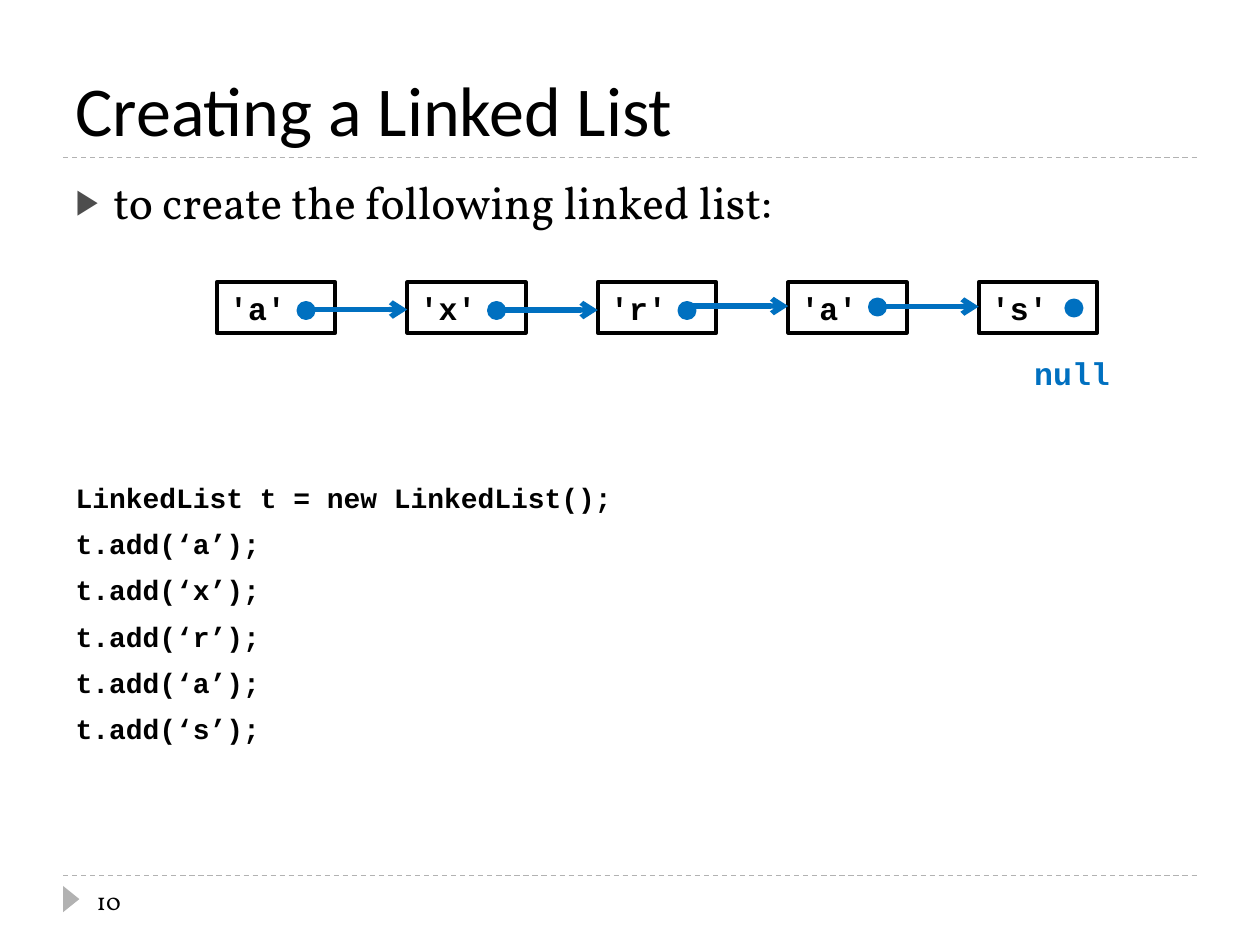
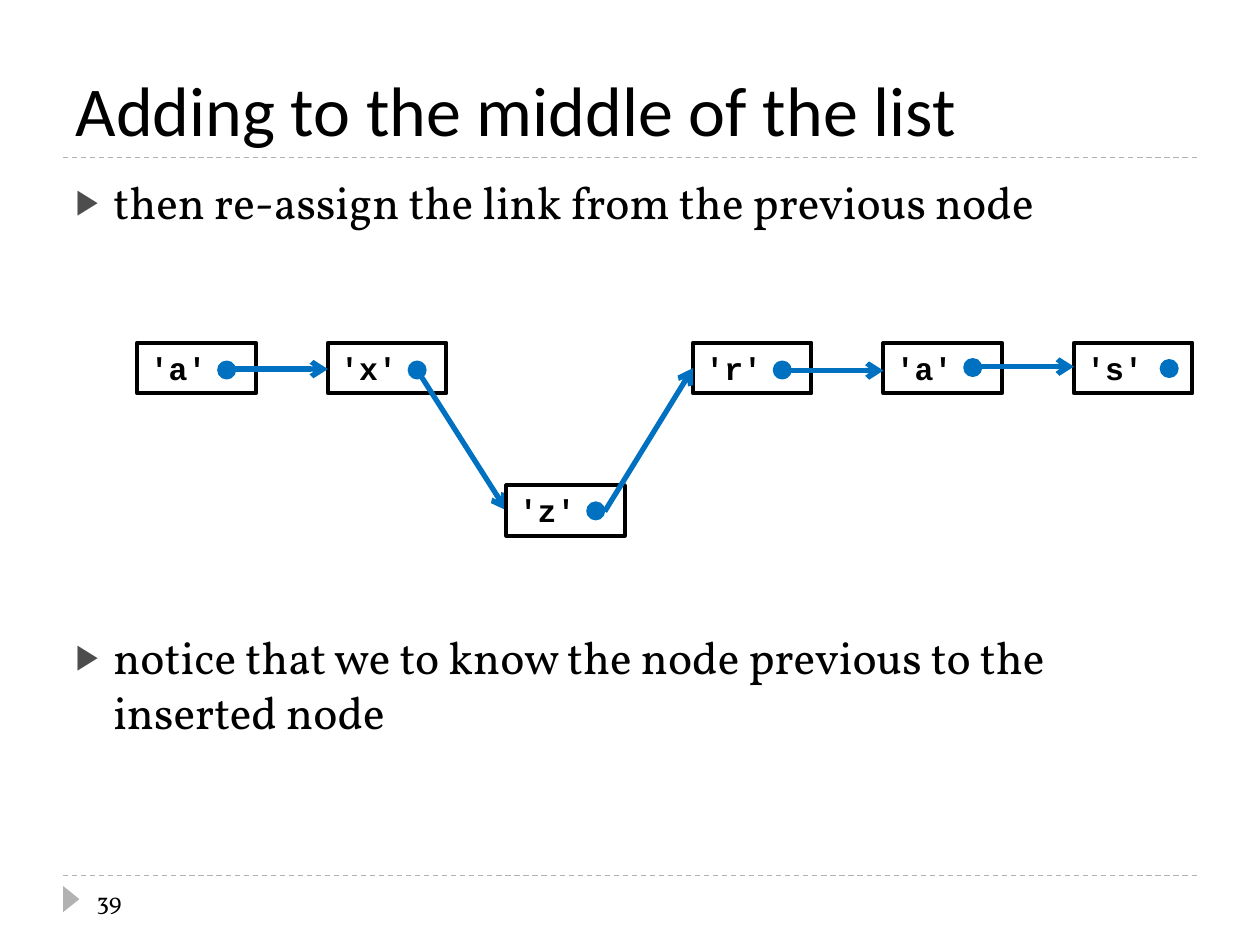
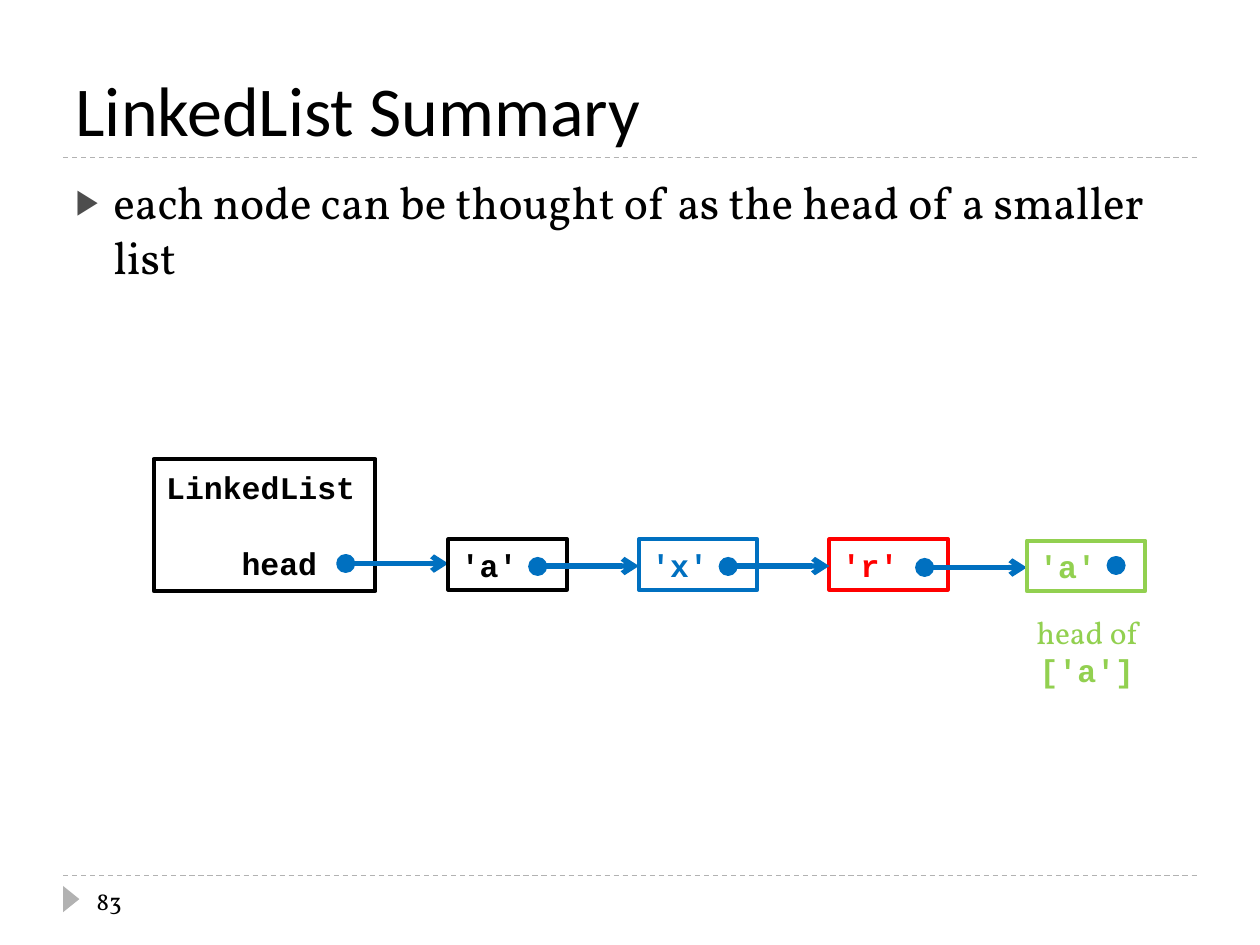
from itertools import repeat

from lxml import etree
from pptx import Presentation
from pptx import util as u
from pptx.dml.color import RGBColor
from pptx.enum import dml, shapes, text
from pptx.oxml.ns import qn

BLACK = RGBColor(0x00, 0x00, 0x00)
BLUE = RGBColor(0x00, 0x70, 0xC0)
RED = RGBColor(0xFF, 0x00, 0x00)
GREEN = RGBColor(0x92, 0xD0, 0x50)
RULE_GRAY = RGBColor(0xB2, 0xB2, 0xB2)
BULLET_GRAY = RGBColor(0x4D, 0x4D, 0x4D)

HEADING = "Calibri"
SERIF = "Vollkorn"
MONO = "Courier New"

NODE_WIDTH, NODE_HEIGHT, NODE_STEP = 2.39, 1.02, 3.84
DOT_SIZE, DOT_INSET, WIDE_DOT_INSET = 0.33, 1.8, 1.92


def write(frame, content, font=MONO, size=18, color=BLACK, bold=False,
          align=text.PP_ALIGN.LEFT, before=0, margin=0, bullet=None):
    para = frame.paragraphs[0]
    if para.runs:
        para = frame.add_paragraph()
    para.alignment = align
    para.space_before = u.Pt(before)
    span = para.add_run()
    span.text = content
    span.font.name = font
    span.font.size = u.Pt(size)
    span.font.bold = bold
    span.font.color.rgb = color
    properties = para._p.get_or_add_pPr()
    properties.set("marL", str(u.Cm(margin)))
    properties.set("indent", str(u.Cm(-margin if bullet else 0)))
    if bullet:
        tint = etree.SubElement(properties, qn("a:buClr"))
        etree.SubElement(tint, qn("a:srgbClr"), val=str(BULLET_GRAY))
        etree.SubElement(properties, qn("a:buSzPct"), val="76000")
        etree.SubElement(properties, qn("a:buChar"), char=bullet)
    else:
        etree.SubElement(properties, qn("a:buNone"))


class ListDeck:
    def __init__(self):
        self.deck = Presentation()
        self.deck.slide_width = u.Cm(25.4)
        self.deck.slide_height = u.Cm(19.05)
        self.page = None

    def start_page(self, title, number):
        self.page = self.deck.slides.add_slide(self.deck.slide_layouts[1])
        for height in (17.65, 3.18):
            self.line((1.27, height), (24.13, height), RULE_GRAY, 0.75).dash_style = \
                dml.MSO_LINE.DASH
        marker = self.shape(shapes.MSO_SHAPE.ISOSCELES_TRIANGLE,
                            1.17, 17.96, 0.53, 0.33, fill=RULE_GRAY)
        marker.rotation = 90
        heading = self.place(self.page.shapes.title, 0.43, 2.74, text.MSO_ANCHOR.BOTTOM)
        write(heading, title, font=HEADING, size=40)
        footer = self.label(1.7, 17.65, 5.51, 1.02)
        footer.vertical_anchor = text.MSO_ANCHOR.MIDDLE
        write(footer, number, font=SERIF, size=14)
        return self.place(self.page.placeholders[1], 3.38, 13.72, text.MSO_ANCHOR.TOP)

    def place(self, holder, top, height, anchor):
        holder.left, holder.top = u.Cm(1.27), u.Cm(top)
        holder.width, holder.height = u.Cm(22.86), u.Cm(height)
        frame = holder.text_frame
        frame.auto_size = text.MSO_AUTO_SIZE.NONE
        frame.vertical_anchor = anchor
        return frame

    def point(self, body, content, before=6):
        write(body, content, font=SERIF, size=26, before=before, margin=0.76, bullet="▶")

    def label(self, left, top, width, height, wrap=True):
        box = self.page.shapes.add_textbox(u.Cm(left), u.Cm(top), u.Cm(width), u.Cm(height))
        box.text_frame.word_wrap = wrap
        return box.text_frame

    def shape(self, kind, left, top, width, height, fill=None, outline=None, weight=1.5):
        box = self.page.shapes.add_shape(
            kind, u.Cm(left), u.Cm(top), u.Cm(width), u.Cm(height))
        box.shadow.inherit = False
        if fill is None:
            box.fill.background()
        else:
            box.fill.solid()
            box.fill.fore_color.rgb = fill
        if outline is None:
            box.line.fill.background()
        else:
            box.line.color.rgb = outline
            box.line.width = u.Pt(weight)
        return box

    def line(self, start, end, color, weight):
        connector = self.page.shapes.add_connector(
            shapes.MSO_CONNECTOR.STRAIGHT, *map(u.Cm, start + end))
        connector.line.color.rgb = color
        connector.line.width = u.Pt(weight)
        etree.SubElement(connector._element.spPr, qn("a:effectLst"))
        return connector.line

    def arrow(self, start, end):
        outline = self.line(start, end, BLUE, 3)
        etree.SubElement(outline._get_or_add_ln(), qn("a:tailEnd"), type="arrow")

    def dot(self, x, y):
        self.shape(shapes.MSO_SHAPE.OVAL, x - DOT_SIZE / 2, y - DOT_SIZE / 2,
                   DOT_SIZE, DOT_SIZE, fill=BLUE, outline=BLUE)
        return x, y

    def frame_box(self, left, top, width, height, color=BLACK):
        box = self.shape(shapes.MSO_SHAPE.RECTANGLE, left, top, width, height,
                         outline=color, weight=2.25)
        box.text_frame.vertical_anchor = text.MSO_ANCHOR.MIDDLE
        return box.text_frame

    def node(self, left, top, letter, drop, inset=DOT_INSET, color=BLACK):
        frame = self.frame_box(left, top, NODE_WIDTH, NODE_HEIGHT, color)
        write(frame, f"'{letter}'", color=color, bold=True)
        return self.dot(left + inset, top + drop)

    def chain(self, left, top, letters, drops, links, last_inset=WIDE_DOT_INSET,
              colors=repeat(BLACK)):
        insets = [DOT_INSET] * (len(letters) - 1) + [last_inset]
        lefts = [left + NODE_STEP * index for index in range(len(letters))]
        dots = [self.node(x, top, letter, drop, inset, color)
                for x, letter, drop, inset, color
                in zip(lefts, letters, drops, insets, colors)]
        for (x, _), target, link in zip(dots, lefts[1:], links):
            self.arrow((x, top + link), (target, top + link))
        return dots[-1]


def creating(show):
    body = show.start_page("Creating a Linked List", "10")
    show.point(body, "to create the following linked list:")
    write(body, "LinkedList t = new LinkedList();", size=16, bold=True, before=144)
    for letter in "axras":
        write(body, f"t.add(‘{letter}’);", size=16, bold=True, before=7.2)
    show.chain(4.37, 5.69, "axras", (0.57, 0.57, 0.57, 0.5, 0.52), (0.55, 0.56, 0.48, 0.49))
    write(show.label(20.6, 7.01, 2.06, 1.02, wrap=False), "null", color=BLUE, bold=True)


def adding(show):
    body = show.start_page("Adding to the middle of the list", "39")
    show.point(body, "then re-assign the link from the previous node")
    show.point(body, "notice that we to know the node previous to the inserted node",
               before=229)
    previous = show.chain(2.77, 6.91, "ax", (0.55, 0.55), (0.53,), last_inset=DOT_INSET)
    show.chain(13.97, 6.91, "ras", (0.55, 0.5, 0.52), (0.56, 0.48))
    show.arrow(previous, (10.21, 10.29))
    show.node(10.21, 9.78, "z", 0.52)
    show.arrow((12.19, 10.31), (13.97, 7.42))


def summary(show):
    body = show.start_page("LinkedList Summary", "83")
    show.point(body, "each node can be thought of as the head of a smaller list")
    owner = show.frame_box(3.1, 9.25, 4.47, 2.67)
    write(owner, "LinkedList", bold=True)
    write(owner, "head", bold=True, before=21.9, margin=1.52)
    head = show.dot(6.97, 11.36)
    show.arrow(head, (9.04, 11.36))
    x, y = show.chain(9.04, 10.87, "axr", (0.55, 0.55, 0.57), (0.54, 0.54),
                      colors=(BLACK, BLUE, RED))
    show.arrow((x, y), (20.7, y))
    show.node(20.7, 10.9, "a", 0.5, color=GREEN)
    caption = show.label(20.55, 12.24, 2.72, 1.8, wrap=False)
    write(caption, "head of", font=SERIF, color=GREEN, align=text.PP_ALIGN.CENTER)
    write(caption, "['a']", color=GREEN, bold=True, align=text.PP_ALIGN.CENTER)


def main():
    show = ListDeck()
    for build in (creating, adding, summary):
        build(show)
    show.deck.save("out.pptx")


if __name__ == "__main__":
    main()
